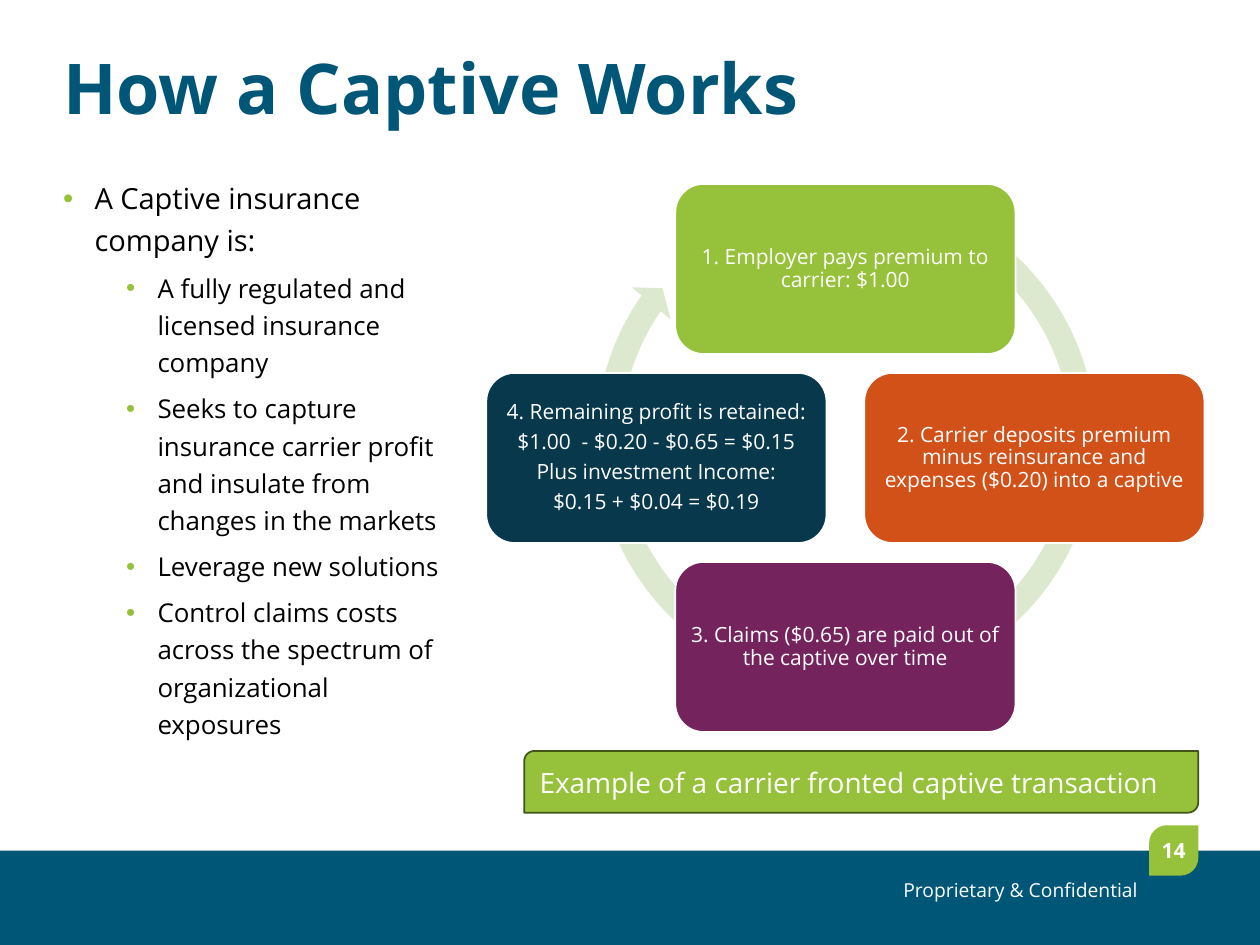
from dataclasses import dataclass
from math import cos, radians, sin

from lxml.etree import SubElement
from pptx import Presentation
from pptx.dml.color import RGBColor
from pptx.enum.shapes import MSO_SHAPE
from pptx.enum.text import MSO_ANCHOR, MSO_AUTO_SIZE, PP_ALIGN
from pptx.oxml.ns import qn
from pptx.util import Inches, Pt


@dataclass(frozen=True)
class Theme:
    """Colours, type face and type sizes of the slide."""
    font: str = "Open Sans"
    blue: str = "005677"
    green: str = "96C13A"
    dark_green: str = "425519"
    pale_green: str = "DDE9CE"
    orange: str = "D25119"
    purple: str = "74235C"
    navy: str = "08384C"
    white: str = "FFFFFF"
    black: str = "000000"
    title_size: float = 40
    body_size: float = 16.6
    sub_size: float = 14.8
    caption_size: float = 16
    node_size: float = 12
    footer_size: float = 11


THEME = Theme()
LEAD = "A Captive insurance company is:"
POINTS = (
    "A fully regulated and licensed insurance company",
    "Seeks to capture insurance carrier profit and insulate from changes in the markets",
    "Leverage new solutions",
    "Control claims costs across the spectrum of organizational exposures",
)
STEPS = (
    (THEME.green, ["1. Employer pays premium to carrier: $1.00"]),
    (THEME.orange, ["2. Carrier deposits premium minus reinsurance and expenses ($0.20) into a captive"]),
    (THEME.purple, ["3. Claims ($0.65) are paid out of the captive over time"]),
    (THEME.navy, [
        "4. Remaining profit is retained:",
        "$1.00  - $0.20 - $0.65 = $0.15",
        "Plus investment Income:",
        "$0.15 + $0.04 = $0.19",
    ]),
)


def write(para, text, size, color=THEME.white, bold=False, align=PP_ALIGN.LEFT,
          spacing=1.0, before=0, after=0):
    """Write one formatted span into a paragraph."""
    para.alignment = align
    para.line_spacing = spacing
    para.space_before, para.space_after = Pt(before), Pt(after)
    span = para.add_run()
    span.text = text
    span.font.name, span.font.size, span.font.bold = THEME.font, Pt(size), bold
    span.font.color.rgb = RGBColor.from_string(color)


def prepare_frame(frame, inset=None, anchor=MSO_ANCHOR.TOP):
    """Set wrapping, anchor and, if given, an equal inset on all sides."""
    frame.word_wrap = True
    frame.auto_size = MSO_AUTO_SIZE.NONE
    frame.vertical_anchor = anchor
    if inset is not None:
        frame.margin_left = frame.margin_right = Inches(inset)
        frame.margin_top = frame.margin_bottom = Inches(inset)
    return frame


def place(box, left, top, width, height):
    """Move and size a placeholder."""
    box.left, box.top = Inches(left), Inches(top)
    box.width, box.height = Inches(width), Inches(height)


def add_bullet(para, indent):
    """Give a paragraph a hanging green bullet."""
    props = para._p.get_or_add_pPr()
    props.set("marL", str(Inches(indent)))
    props.set("indent", str(-Inches(0.25)))
    color = SubElement(props, qn("a:buClr"))
    SubElement(color, qn("a:srgbClr"), val=THEME.green)
    SubElement(props, qn("a:buFont"), typeface="Arial")
    SubElement(props, qn("a:buChar"), char="•")


def add_panel(page, kind, bounds, fill, line=None, adjustments=()):
    """Add a flat filled shape."""
    box = page.shapes.add_shape(kind, *map(Inches, bounds))
    box.shadow.inherit = False
    box.fill.solid()
    box.fill.fore_color.rgb = RGBColor.from_string(fill)
    if line:
        box.line.color.rgb = RGBColor.from_string(line)
        box.line.width = Pt(1)
    else:
        box.line.fill.background()
    for index, value in enumerate(adjustments):
        box.adjustments[index] = value
    return box


def add_title(page):
    """Fill the title placeholder."""
    box = page.shapes.title
    place(box, 0.5, 0.35, 9.01, 0.56)
    frame = prepare_frame(box.text_frame, inset=0)
    write(frame.paragraphs[0], "How a Captive Works", THEME.title_size, THEME.blue, bold=True)


def add_body(page):
    """Fill the body placeholder with the lead and its points."""
    box = page.placeholders[1]
    place(box, 0.5, 1.38, 3.12, 5)
    frame = prepare_frame(box.text_frame, inset=0)
    lead = frame.paragraphs[0]
    add_bullet(lead, 0.25)
    write(lead, LEAD, THEME.body_size, THEME.black, spacing=1.2)
    for point in POINTS:
        para = frame.add_paragraph()
        para.level = 1
        add_bullet(para, 0.75)
        write(para, point, THEME.sub_size, THEME.black, spacing=1.2, before=5)


def add_cycle(page):
    """Draw the circular arrow and the four steps around it."""
    center_x, center_y, radius = 6.71, 3.635, 1.5
    width, height = 2.7, 1.35
    add_panel(page, MSO_SHAPE.CIRCULAR_ARROW, (4.63, 1.4, 4.17, 4.17), THEME.pale_green,
              adjustments=(0.047, 2.73, 128.92, 179.9, 0.048))
    for index, (color, lines) in enumerate(STEPS):
        angle = radians(index * 360 / len(STEPS) - 90)
        left = center_x + radius * cos(angle) - width / 2
        top = center_y + radius * sin(angle) - height / 2
        box = add_panel(page, MSO_SHAPE.ROUNDED_RECTANGLE, (left, top, width, height),
                        color, THEME.white)
        frame = prepare_frame(box.text_frame, 0.05, MSO_ANCHOR.MIDDLE)
        for number, line in enumerate(lines):
            para = frame.add_paragraph() if number else frame.paragraphs[0]
            write(para, line, THEME.node_size, align=PP_ALIGN.CENTER, spacing=0.9, after=4.2)


def add_caption(page):
    """Add the label under the cycle."""
    box = add_panel(page, MSO_SHAPE.ROUND_2_DIAG_RECTANGLE, (4.16, 5.96, 5.35, 0.49),
                    THEME.green, THEME.dark_green)
    frame = prepare_frame(box.text_frame, anchor=MSO_ANCHOR.MIDDLE)
    write(frame.paragraphs[0], "Example of a carrier fronted captive transaction",
          THEME.caption_size)


def add_footer(page):
    """Add the bottom band, its notice and the page number."""
    add_panel(page, MSO_SHAPE.RECTANGLE, (0, 6.75, 10, 0.75), THEME.blue)
    box = page.shapes.add_textbox(*map(Inches, (5.29, 6.92, 3.84, 0.29)))
    write(prepare_frame(box.text_frame).paragraphs[0], "Proprietary & Confidential",
          THEME.footer_size, align=PP_ALIGN.RIGHT)
    badge = add_panel(page, MSO_SHAPE.ROUND_2_DIAG_RECTANGLE, (9.12, 6.55, 0.39, 0.4),
                      THEME.green, adjustments=(0.363, 0))
    frame = prepare_frame(badge.text_frame, 0, MSO_ANCHOR.MIDDLE)
    write(frame.paragraphs[0], "14", THEME.node_size, bold=True, align=PP_ALIGN.CENTER)


def main():
    """Build and save the slide."""
    deck = Presentation()
    deck.slide_width, deck.slide_height = Inches(10), Inches(7.5)
    page = deck.slides.add_slide(deck.slide_layouts[1])
    add_title(page)
    add_body(page)
    add_footer(page)
    add_cycle(page)
    add_caption(page)
    deck.save("out.pptx")


if __name__ == "__main__":
    main()
